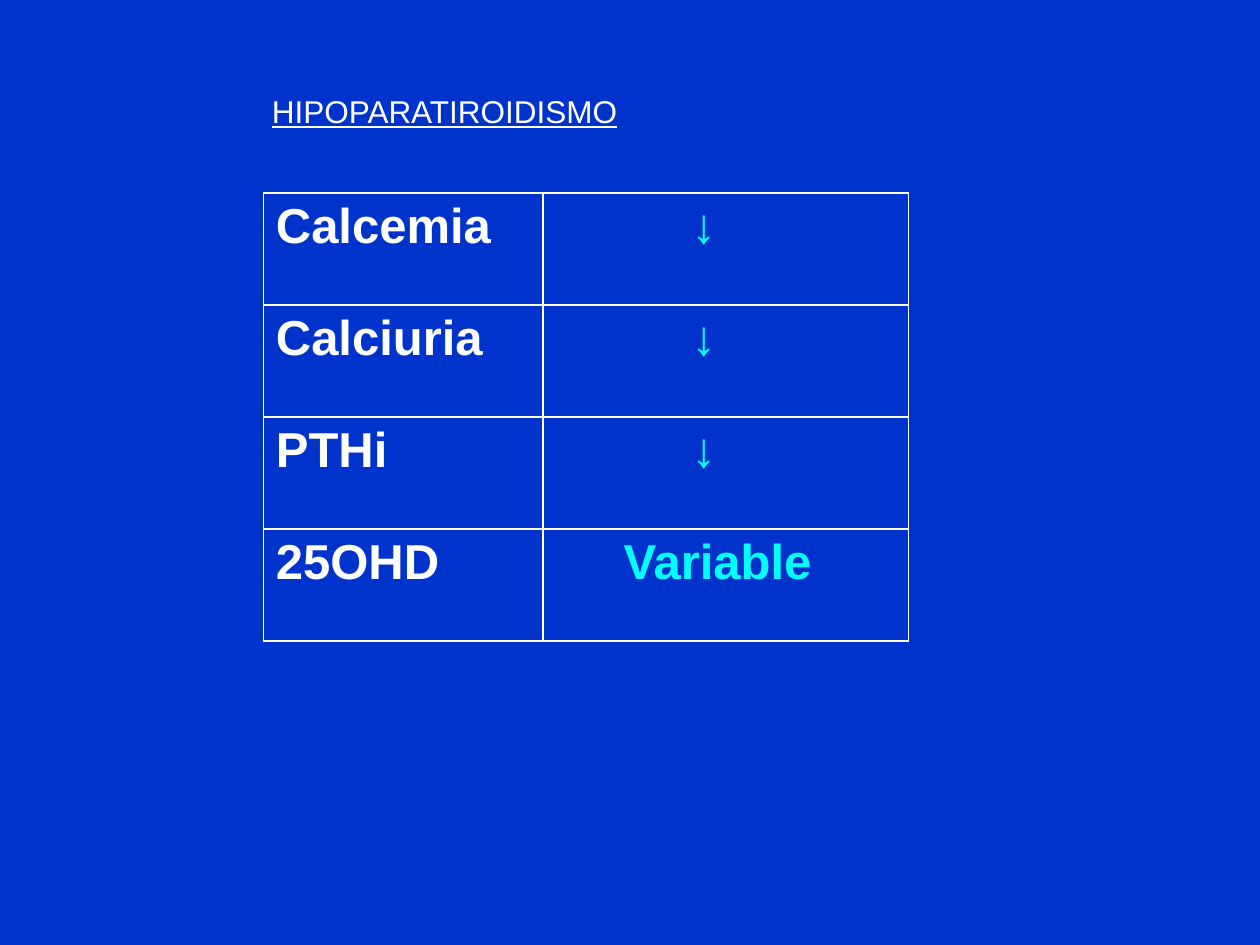
from lxml.etree import SubElement
from pptx import Presentation
from pptx.dml.color import RGBColor
from pptx.oxml.ns import qn
from pptx.util import Inches, Pt

COLORS = {"background": "0033CC", "text": "FFFFFF", "result": "00FFFF"}
FONT = "Arial"

# Table grid, in inches
LEFT, TOP = 2.09, 1.53
COL_WIDTHS = (2.22, 2.9)
ROW_HEIGHT = 0.89
CELL_MARGIN = 0.1

# Test, result and indent of the result
ROWS = [
    ("Calcemia", "↓", 1.08),
    ("Calciuria", "↓", 1.08),
    ("PTHi", "↓", 1.08),
    ("25OHD", "Variable", 0.54),
]


def rgb(name):
    return RGBColor.from_string(COLORS[name])


def add_run(p, text, size, color, bold=False, underline=False):
    r = p.add_run()
    r.text = text
    r.font.name = FONT
    r.font.size = Pt(size)
    r.font.bold = bold
    r.font.underline = underline
    r.font.color.rgb = rgb(color)


def add_title(s, text):
    sp = s.shapes.add_textbox(Inches(2.06), Inches(0.68), Inches(5.19), Inches(0.63))
    tf = sp.text_frame
    tf.word_wrap = True
    add_run(tf.paragraphs[0], text, 18, "text", underline=True)


def set_borders(cell, color, width=1):
    tc_pr = cell._tc.get_or_add_tcPr()
    for side in ("lnL", "lnR", "lnT", "lnB"):
        ln = SubElement(tc_pr, qn(f"a:{side}"), w=str(Pt(width)))
        fill = SubElement(ln, qn("a:solidFill"))
        SubElement(fill, qn("a:srgbClr"), val=COLORS[color])


def fill_cell(cell, text, color, indent=0):
    set_borders(cell, "text")
    cell.fill.background()
    cell.margin_left = Inches(CELL_MARGIN + indent)
    add_run(cell.text_frame.paragraphs[0], text, 28, color, bold=True)


def add_results_table(s):
    table = s.shapes.add_table(
        len(ROWS), len(COL_WIDTHS), Inches(LEFT), Inches(TOP),
        Inches(sum(COL_WIDTHS)), Inches(ROW_HEIGHT * len(ROWS)),
    ).table
    table.first_row = table.horz_banding = False
    for column, width in zip(table.columns, COL_WIDTHS):
        column.width = Inches(width)
    for i, (test, result, indent) in enumerate(ROWS):
        table.rows[i].height = Inches(ROW_HEIGHT)
        fill_cell(table.cell(i, 0), test, "text")
        fill_cell(table.cell(i, 1), result, "result", indent)


def main():
    prs = Presentation()
    prs.slide_width, prs.slide_height = Inches(10), Inches(7.5)
    s = prs.slides.add_slide(prs.slide_layouts[6])

    # Background
    s.background.fill.solid()
    s.background.fill.fore_color.rgb = rgb("background")

    # Content
    add_results_table(s)
    add_title(s, "HIPOPARATIROIDISMO")
    prs.save("out.pptx")


if __name__ == "__main__":
    main()
